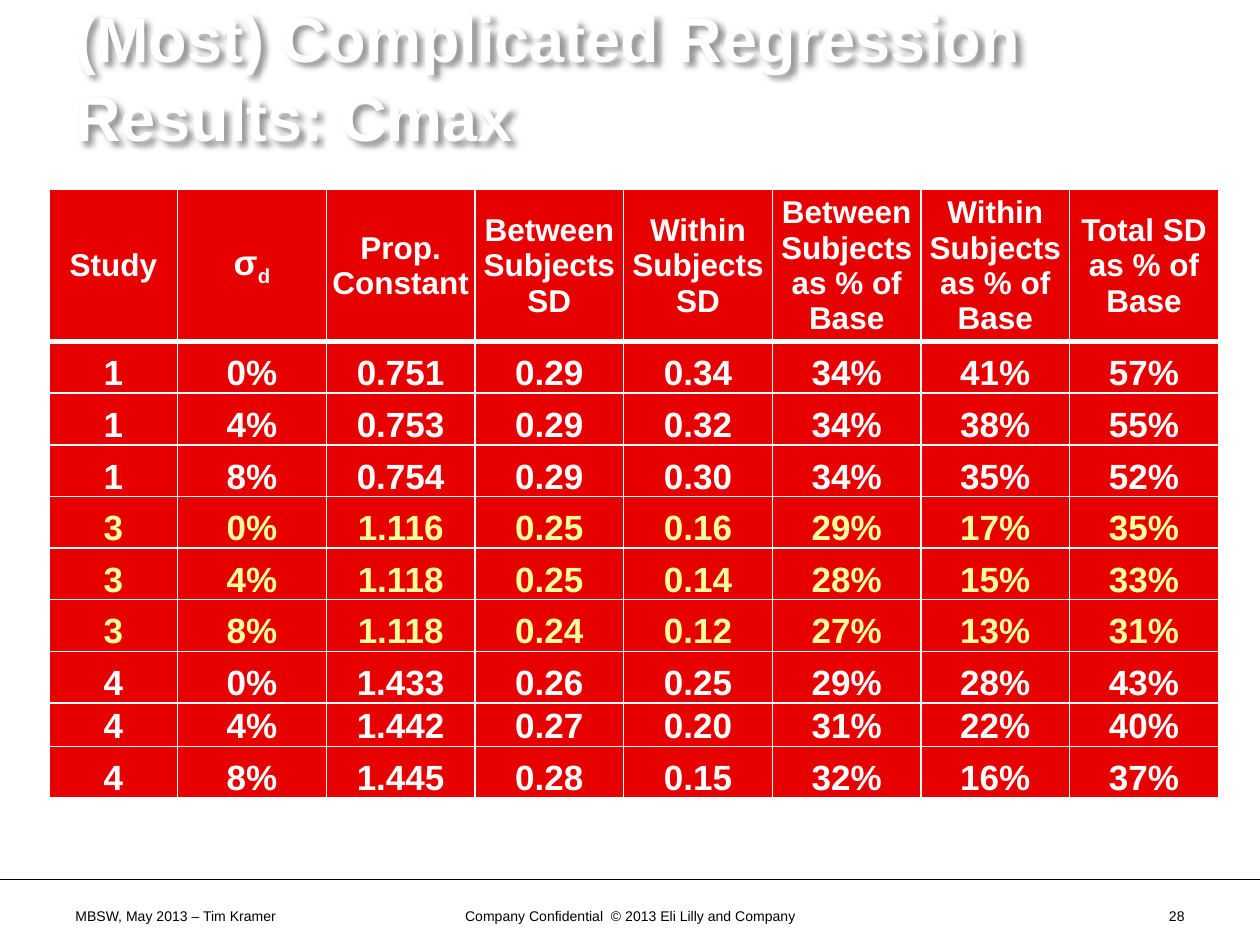
from lxml import etree
from pptx import Presentation
from pptx.dml.color import RGBColor
from pptx.enum.shapes import MSO_CONNECTOR
from pptx.enum.text import MSO_ANCHOR, PP_ALIGN
from pptx.oxml import parse_xml
from pptx.oxml.ns import nsdecls, qn
from pptx.util import Inches, Pt

LEFT, CENTER, RIGHT = PP_ALIGN.LEFT, PP_ALIGN.CENTER, PP_ALIGN.RIGHT
TOP, MIDDLE, BOTTOM = MSO_ANCHOR.TOP, MSO_ANCHOR.MIDDLE, MSO_ANCHOR.BOTTOM

TITLE = "(Most) Complicated Regression Results: Cmax"
HEADERS = [
    "Study", "σ", "Prop. Constant", "Between Subjects SD", "Within Subjects SD",
    "Between Subjects as % of Base", "Within Subjects as % of Base",
    "Total SD as % of Base",
]
SIGMA_COLUMN, SIGMA_SUBSCRIPT = 1, "d"
RESULTS = [
    ("1", "0%", "0.751", "0.29", "0.34", "34%", "41%", "57%"),
    ("1", "4%", "0.753", "0.29", "0.32", "34%", "38%", "55%"),
    ("1", "8%", "0.754", "0.29", "0.30", "34%", "35%", "52%"),
    ("3", "0%", "1.116", "0.25", "0.16", "29%", "17%", "35%"),
    ("3", "4%", "1.118", "0.25", "0.14", "28%", "15%", "33%"),
    ("3", "8%", "1.118", "0.24", "0.12", "27%", "13%", "31%"),
    ("4", "0%", "1.433", "0.26", "0.25", "29%", "28%", "43%"),
    ("4", "4%", "1.442", "0.27", "0.20", "31%", "22%", "40%"),
    ("4", "8%", "1.445", "0.28", "0.15", "32%", "16%", "37%"),
]
HIGHLIGHTED_STUDY = "3"
SHORT_ROW = 8
FOOTERS = [  # text, left, width, alignment
    ("MBSW, May 2013 – Tim Kramer", 0.5, 2.33, LEFT),
    ("Company Confidential  © 2013 Eli Lilly and Company", 3.42, 3.17, CENTER),
    ("28", 7.17, 2.33, RIGHT),
]

THEME = {
    "font": "Arial",
    "white": "FFFFFF", "black": "000000", "red": "E60000", "yellow": "FFFF99",
    "title": 36, "header": 18, "body": 20, "footer": 8,
    "rule": 0.5, "border": 1, "header_border": 3,
}

SLIDE_WIDTH, SLIDE_HEIGHT = 10, 7.5
RULE_TOP, FOOTER_TOP, FOOTER_HEIGHT = 6.98, 7.15, 0.25
TABLE_LEFT, TABLE_TOP = 0.39, 1.5
COLUMN_WIDTHS = [1.02] + [1.18] * (len(HEADERS) - 1)
ROW_HEIGHTS = [1.12] + [0.32 if row == SHORT_ROW else 0.41
                        for row in range(1, len(RESULTS) + 1)]


def add_span(para, text, size, color, bold=False):
    span = para.add_run()
    span.text = text
    for name, value in {"name": THEME["font"], "size": Pt(size), "bold": bold}.items():
        setattr(span.font, name, value)
    span.font.color.rgb = RGBColor.from_string(THEME[color])
    return span


def add_text(page, text, place, size, color, align=LEFT, anchor=TOP, bold=False):
    box = page.shapes.add_textbox(*map(Inches, place))
    box.text_frame.word_wrap = True
    box.text_frame.vertical_anchor = anchor
    para = box.text_frame.paragraphs[0]
    para.alignment = align
    add_span(para, text, size, color, bold)
    return box


def add_title(page):
    box = add_text(page, TITLE, (0.5, -0.03, 9, 1.25), THEME["title"], "white",
                   anchor=MIDDLE, bold=True)
    box.text_frame.paragraphs[0].line_spacing = 1.05
    box.element.spPr.append(parse_xml(
        f'<a:effectLst {nsdecls("a")}>'
        '<a:outerShdw blurRad="38100" dist="38100" dir="2700000" algn="tl">'
        '<a:srgbClr val="000000"><a:alpha val="43000"/></a:srgbClr>'
        '</a:outerShdw></a:effectLst>'))


def set_borders(cell, top, bottom):
    """Draw white borders; the fill must be set afterwards to keep XML order."""
    properties = cell._tc.get_or_add_tcPr()
    widths = {"L": THEME["border"], "R": THEME["border"], "T": top, "B": bottom}
    for side, width in widths.items():
        line = etree.SubElement(properties, qn(f"a:ln{side}"), w=str(Pt(width)))
        fill = etree.SubElement(line, qn("a:solidFill"))
        etree.SubElement(fill, qn("a:srgbClr"), val=THEME["white"])


def add_cell(cell, text, row, color):
    is_header = row == 0
    thin, thick = THEME["border"], THEME["header_border"]
    set_borders(cell, thick if row == 1 else thin, thick if is_header else thin)
    cell.fill.solid()
    cell.fill.fore_color.rgb = RGBColor.from_string(THEME["red"])
    layout = {
        "margin_left": Inches(0.01), "margin_right": Inches(0.01),
        "margin_top": Inches(0.01), "margin_bottom": 0,
        "vertical_anchor": MIDDLE if is_header else BOTTOM,
    }
    for name, value in layout.items():
        setattr(cell, name, value)
    para = cell.text_frame.paragraphs[0]
    para.alignment = CENTER
    is_sigma = is_header and text == HEADERS[SIGMA_COLUMN]
    size = THEME["header"] if is_header and not is_sigma else THEME["body"]
    add_span(para, text, size, color, True)
    if is_sigma:
        subscript = add_span(para, SIGMA_SUBSCRIPT, size, color, True)
        subscript.font._element.set("baseline", "-25000")


def add_results(page):
    rows = [HEADERS] + RESULTS
    frame = page.shapes.add_table(
        len(rows), len(HEADERS), Inches(TABLE_LEFT), Inches(TABLE_TOP),
        Inches(sum(COLUMN_WIDTHS)), Inches(sum(ROW_HEIGHTS)))
    table = frame.table
    table.horz_banding = False
    for column, width in zip(table.columns, COLUMN_WIDTHS):
        column.width = Inches(width)
    for table_row, height in zip(table.rows, ROW_HEIGHTS):
        table_row.height = Inches(height)
    for row, values in enumerate(rows):
        color = "yellow" if values[0] == HIGHLIGHTED_STUDY else "white"
        for column, text in enumerate(values):
            add_cell(table.cell(row, column), text, row, color)


def add_footer(page):
    rule = page.shapes.add_connector(
        MSO_CONNECTOR.STRAIGHT, 0, Inches(RULE_TOP),
        Inches(SLIDE_WIDTH), Inches(RULE_TOP))
    rule.line.color.rgb = RGBColor.from_string(THEME["black"])
    rule.line.width = Pt(THEME["rule"])
    etree.SubElement(rule._element.spPr, qn("a:effectLst"))
    for text, left, width, align in FOOTERS:
        add_text(page, text, (left, FOOTER_TOP, width, FOOTER_HEIGHT),
                 THEME["footer"], "black", align)


def main():
    deck = Presentation()
    deck.slide_width, deck.slide_height = Inches(SLIDE_WIDTH), Inches(SLIDE_HEIGHT)
    page = deck.slides.add_slide(deck.slide_layouts[6])
    add_title(page)
    add_results(page)
    add_footer(page)
    deck.save("out.pptx")


if __name__ == "__main__":
    main()
